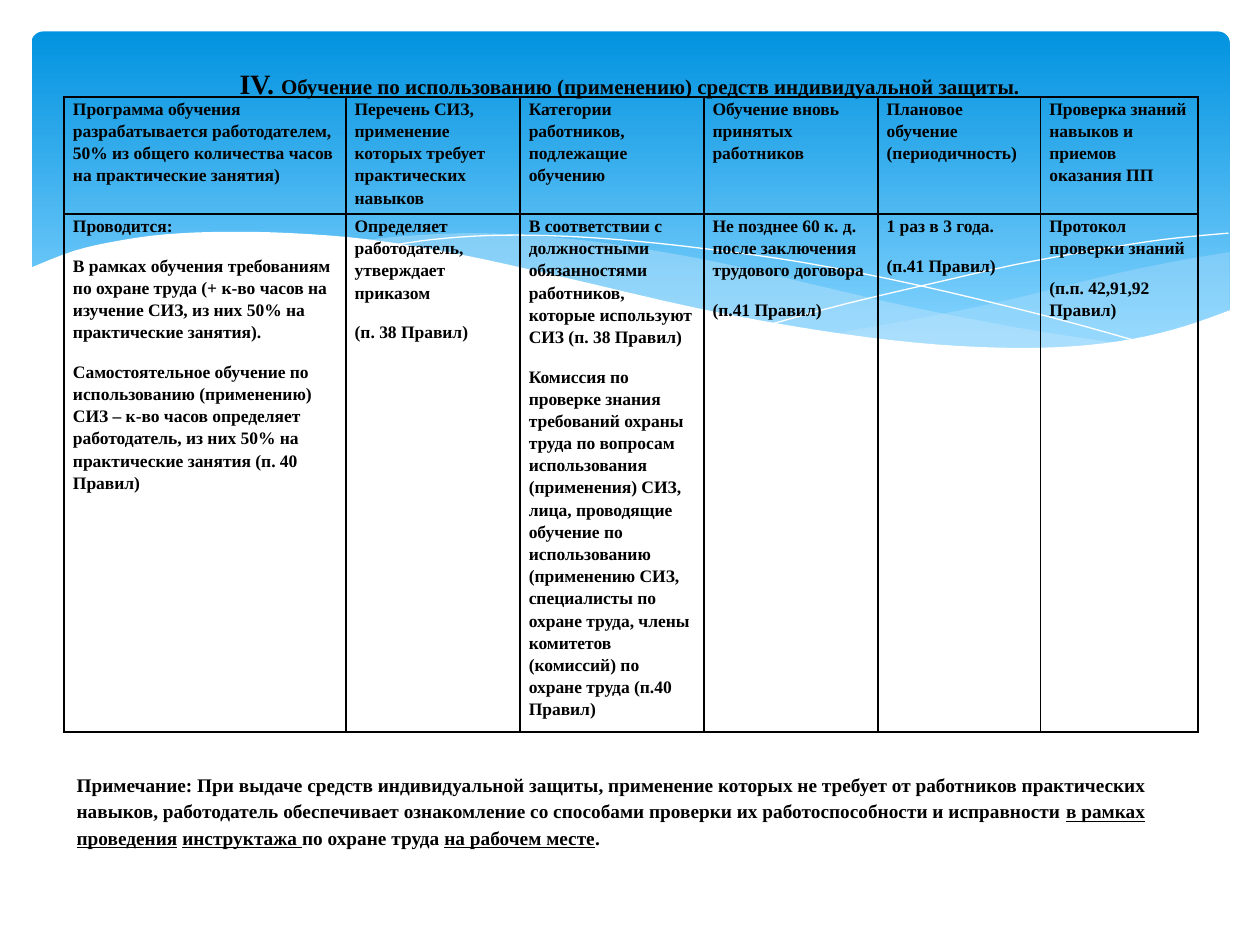
import pptx
import pptx.util
import pptx.dml.color
import pptx.enum.shapes
import pptx.enum.text
import pptx.oxml
import pptx.oxml.ns
import lxml.etree

Pt = pptx.util.Pt
RGB = pptx.dml.color.RGBColor
BLACK = RGB(0x00, 0x00, 0x00)
WHITE = RGB(0xFF, 0xFF, 0xFF)
DEEP = RGB(0x02, 0x93, 0xE0)
SKY = RGB(0x83, 0xD3, 0xFE)
PALE = RGB(0xC6, 0xE7, 0xFC)

FONT = {"name": "Times New Roman", "bold": True}
PARA = {"line_spacing": 1.15, "space_after": Pt(10)}

VEIL = [
    [(686.7, 12), (657.2, 17), (625.5, 23.5), (603.9, 28.6), (563.6, 38.6),
     (526.2, 46.6), (492.3, 53), (459.9, 58.8)],
    [(459.9, 58.8), (491.6, 63.1), (520.4, 66), (562.2, 68.2), (598.9, 66.7),
     (629.8, 62.4), (657.2, 56.6), (686.7, 45.8)],
]
BAND = [
    [(627, 64.6), (586.6, 58.8), (542, 50.9), (492.3, 40.8), (436.9, 27.8),
     (393.7, 17.8), (354.1, 10.6), (318.8, 5.5), (286.4, 2.6), (257.6, 1.2),
     (231.7, 1.9), (209.4, 3.4), (189.9, 5.5)],
    [(189.9, 5.5), (230.2, 11.3), (274.9, 19.9), (307.3, 27.8), (365.6, 40.8),
     (416.7, 51.6), (462.8, 59.5), (503.8, 65.3), (540.6, 67.4), (573, 68.2),
     (601, 67.4), (627, 64.6)],
]
FALL = [
    [(206.5, 8.4), (231.7, 4.8), (262.6, 2.6), (295.8, 2.6), (336.1, 4.8),
     (384.3, 9.8), (441.9, 17.8), (507.4, 30.7), (582.3, 48.7), (637, 63.8)],
]
RISE = [
    [(425.4, 53), (467.8, 41.5), (522.6, 28.6), (564.3, 19.2), (607.5, 11.3),
     (649.3, 4.8), (686, 1.2)],
]
FOAM = [
    [(687.4, 45.1), (660.8, 54.5), (631.3, 61.7), (596, 66), (555, 66.7),
     (506.7, 63.8), (450.6, 56.6), (383.6, 44.4), (305.8, 26.4), (246.8, 13.4),
     (194.2, 4.8), (149.6, 1.2), (111.4, 0.5), (79, 1.9), (52.4, 5.5),
     (26.5, 11.3), (0.6, 21.4)],
    [(0.6, 104.9), (687.4, 104.9)],
]

COLS = [161, 99.5, 105, 99.5, 93, 90]
ROWS = [67, 296]
CELLS = [
    [
        ["Программа обучения разрабатывается работодателем, 50% из общего количества часов на практические занятия)"],
        ["Перечень СИЗ, применение которых требует практических навыков"],
        ["Категории работников, подлежащие обучению"],
        ["Обучение вновь принятых работников"],
        ["Плановое обучение (периодичность)"],
        ["Проверка знаний навыков и приемов оказания ПП"],
    ],
    [
        ["Проводится:",
         "В рамках обучения требованиям по охране труда (+ к-во часов на изучение СИЗ, из них 50% на практические занятия).",
         "Самостоятельное обучение по использованию (применению) СИЗ – к-во часов определяет работодатель, из них 50% на практические занятия (п. 40 Правил)"],
        ["Определяет работодатель, утверждает приказом", "(п. 38 Правил)"],
        ["В соответствии с должностными обязанностями работников, которые используют СИЗ (п. 38 Правил)",
         "Комиссия по проверке знания требований охраны труда по вопросам использования (применения) СИЗ, лица, проводящие обучение по использованию (применению СИЗ, специалисты по охране труда, члены комитетов (комиссий) по охране труда (п.40 Правил)"],
        ["Не позднее 60 к. д. после заключения трудового договора", "(п.41 Правил)"],
        ["1 раз в 3 года.", "(п.41 Правил)"],
        ["Протокол проверки знаний", "(п.п. 42,91,92 Правил)"],
    ],
]
HEAD = [
    ("IV. ", {"size": Pt(16)}),
    ("Обучение по использованию (применению) средств индивидуальной защиты.", {"size": Pt(12)}),
]
PLAIN = {"size": Pt(11)}
UNDER = {"size": Pt(11), "underline": True}
NOTE = [
    ("Примечание: При выдаче средств индивидуальной защиты, применение которых не требует от работников практических навыков, работодатель обеспечивает ознакомление со способами проверки их работоспособности и исправности ", PLAIN),
    ("в рамках проведения", UNDER),
    (" ", PLAIN),
    ("инструктажа ", UNDER),
    ("по охране труда ", PLAIN),
    ("на рабочем месте", UNDER),
    (".", PLAIN),
]


def style(item, *looks):
    for look in looks:
        for key, val in look.items():
            setattr(item, key, val)


def write(para, runs, look):
    style(para, PARA, look)
    for text, form in runs:
        run = para.add_run()
        run.text = text
        style(run.font, FONT, form)
        run.font.color.rgb = BLACK


def smooth(knots, steps=4):
    ends = [knots[0]] + knots + [knots[-1]]
    points = [knots[0]]
    for a, b, c, d in zip(ends, ends[1:], ends[2:], ends[3:]):
        for step in range(1, steps + 1):
            t = step / steps
            points.append(tuple(
                q + t * (r - p) / 2
                + t ** 2 * (2 * p - 5 * q + 4 * r - s) / 2
                + t ** 3 * (3 * q - p - 3 * r + s) / 2
                for p, q, r, s in zip(a, b, c, d)))
    return points


def wave(shapes, box, parts, fill=None, alpha=None):
    left, top = box[:2]
    points = [(Pt(left + x), Pt(top + y)) for part in parts for x, y in smooth(part)]
    pen = shapes.build_freeform(*points[0], scale=1.0)
    pen.add_line_segments(points[1:], close=fill is not None)
    shape = pen.convert_to_shape()
    shape.shadow.inherit = False
    if fill is None:
        shape.fill.background()
        shape.line.color.rgb = WHITE
        shape.line.width = Pt(0)
        return
    shape.fill.solid()
    shape.fill.fore_color.rgb = fill
    shape.line.fill.background()
    if alpha:
        tint = shape.element.find(".//" + pptx.oxml.ns.qn("a:srgbClr"))
        lxml.etree.SubElement(tint, pptx.oxml.ns.qn("a:alpha"), val=str(alpha * 1000))


def sea(shapes, box):
    left, top, width, height = box
    kind = pptx.enum.shapes.MSO_SHAPE.ROUNDED_RECTANGLE
    panel = shapes.add_shape(kind, Pt(left), Pt(top), Pt(width), Pt(height))
    panel.adjustments[0] = 0.034
    panel.shadow.inherit = False
    panel.line.fill.background()
    panel.fill.gradient()
    panel.fill.gradient_angle = 270
    for stop, tint, place in zip(panel.fill.gradient_stops, (DEEP, SKY), (0, 0.9)):
        stop.color.rgb = tint
        stop.position = place
    area = (left - 2, top + 114, width + 4, 105)
    wave(shapes, area, VEIL, PALE, 29)
    wave(shapes, area, BAND, PALE, 40)
    wave(shapes, area, FALL)
    wave(shapes, area, RISE)
    wave(shapes, area, FOAM, WHITE)


def edge(cell):
    props = cell._tc.get_or_add_tcPr()
    for at, side in enumerate(("lnL", "lnR", "lnT", "lnB")):
        props.insert(at, pptx.oxml.parse_xml(
            f'<a:{side} {pptx.oxml.ns.nsdecls("a")} w="{Pt(1)}"><a:solidFill>'
            f'<a:srgbClr val="{BLACK}"/></a:solidFill></a:{side}>'))


def grid(shapes, box):
    frame = shapes.add_table(len(ROWS), len(COLS), *map(Pt, box))
    table = frame.table
    style(table, {"first_row": False, "horz_banding": False})
    for col, width in zip(table.columns, COLS):
        col.width = Pt(width)
    for row, height, texts in zip(table.rows, ROWS, CELLS):
        row.height = Pt(height)
        for cell, lines in zip(row.cells, texts):
            style(cell, {"margin_left": Pt(5), "margin_right": Pt(5),
                         "margin_top": 0, "margin_bottom": 0})
            cell.fill.background()
            edge(cell)
            for at, line in enumerate(lines):
                body = cell.text_frame
                para = body.add_paragraph() if at else body.paragraphs[0]
                write(para, [(line, {"size": Pt(10)})], {})


def head(shapes, box):
    title = shapes.title
    style(title, dict(zip(("left", "top", "width", "height"), map(Pt, box))))
    style(title.text_frame, {
        "word_wrap": True,
        "auto_size": pptx.enum.text.MSO_AUTO_SIZE.NONE,
        "vertical_anchor": pptx.enum.text.MSO_ANCHOR.MIDDLE})
    write(title.text_frame.paragraphs[0], HEAD,
          {"alignment": pptx.enum.text.PP_ALIGN.CENTER})
    title.element.getparent().append(title.element)


def note(shapes, box):
    frame = shapes.add_textbox(*map(Pt, box)).text_frame
    frame.word_wrap = True
    write(frame.paragraphs[0], NOTE, {})


def main():
    deck = pptx.Presentation()
    style(deck, {"slide_width": Pt(720), "slide_height": Pt(540)})
    shapes = deck.slides.add_slide(deck.slide_layouts[5]).shapes
    sea(shapes, (18, 18, 684.7, 194.4))
    grid(shapes, (36.7, 55.4, sum(COLS), sum(ROWS)))
    head(shapes, (36, 21.6, 648, 49.7))
    note(shapes, (36.7, 436.3, 646.6, 52.6))
    deck.save("out.pptx")


if __name__ == "__main__":
    main()
